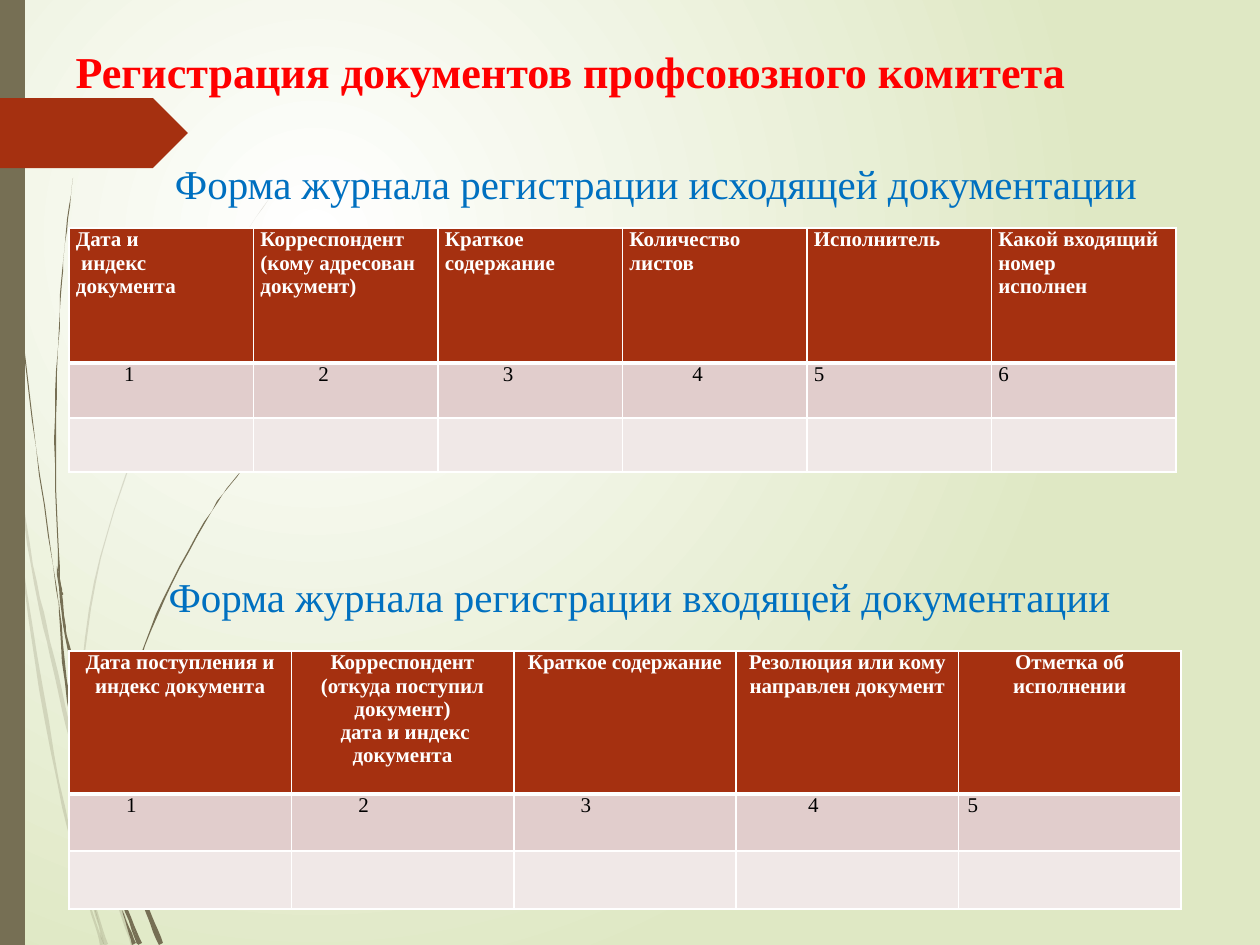
from math import hypot
from pptx import Presentation
from pptx.dml.color import RGBColor
from pptx.enum.shapes import MSO_SHAPE
from pptx.enum.text import MSO_ANCHOR, MSO_AUTO_SIZE, PP_ALIGN
from pptx.oxml import parse_xml
from pptx.oxml.ns import nsdecls
from pptx.util import Pt

# Content
TITLE = "Регистрация документов профсоюзного комитета"
# text, (left, top, width, height)
SUBTITLES = [
    ("Форма журнала регистрации исходящей документации", (89, 138, 1134, 91)),
    ("Форма журнала регистрации входящей документации", (88, 552, 1103, 89)),
]
TABLES = [
    {"box": (69, 228, 1107), "rows": (135, 55, 54), "inset": 7, "align": PP_ALIGN.LEFT,
     "head": ["Дата и\n индекс документа", "Корреспондент\n(кому адресован документ)",
              "Краткое содержание", "Количество листов", "Исполнитель",
              "Какой входящий номер\nисполнен"]},
    {"box": (69, 651, 1112), "rows": (143, 57, 58), "inset": 9, "align": PP_ALIGN.CENTER,
     "head": ["Дата поступления и индекс документа",
              "Корреспондент\n(откуда поступил документ)\n дата и индекс документа",
              "Краткое содержание", "Резолюция или кому направлен документ",
              "Отметка об исполнении"]},
]
NUMBER_INDENTS = [48, 58, 58, 63, 0, 0]

# Grass blades: centre line, (thickness at start, middle, end)
PALE_BLADES = [
    ([(0, 365), (5, 400), (9, 441)], (3, 3, 0.5)),
    ([(13, 435), (32, 565), (52, 656), (74, 751)], (0.5, 4, 4)),
    ([(77, 751), (79, 766), (109, 873), (133, 945)], (0.5, 3, 4)),
    ([(92, 896), (106, 945)], (0.5, 2, 4)),
    ([(10, 441), (26, 592), (58, 781), (88, 900)], (0.5, 4, 0.5)),
    ([(73, 755), (78, 814), (91, 896)], (0.5, 3, 0.5)),
    ([(273, 193), (235, 249), (200, 308), (139, 439), (95, 582), (76, 736),
      (76, 751)], (0.5, 1, 2)),
    ([(88, 900), (102, 945)], (0.5, 2, 4)),
    ([(75, 738), (75, 769)], (0.5, 4, 0.5)),
    ([(82, 861), (87, 882), (104, 945)], (0.5, 2, 1)),
]
DARK_BLADES = [
    ([(3, 0), (6, 60), (7, 139), (18, 294), (36, 447), (59, 606)], (1, 1.5, 0.5)),
    ([(63, 595), (66, 636), (94, 745), (111, 813)], (0.5, 3, 2)),
    ([(115, 808), (117, 822), (140, 891), (161, 944)], (0.5, 4, 5)),
    ([(59, 601), (69, 701), (100, 829), (122, 910)], (0.5, 5, 0.5)),
    ([(73, 178), (65, 243), (60, 309), (55, 440), (59, 568), (62, 595)], (0.5, 1, 2)),
    ([(126, 906), (140, 944)], (0.5, 2, 4)),
    ([(57, 566), (66, 636)], (0.5, 3, 0.5)),
    ([(272, 433), (241, 471), (212, 511), (164, 599), (129, 695), (113, 796),
      (114, 807)], (0.5, 1.5, 3)),
    ([(122, 910), (134, 944)], (0.5, 2, 4)),
    ([(111, 813), (116, 860), (126, 906)], (0.5, 3, 0.5)),
    ([(112, 795), (115, 827)], (0.5, 4, 0.5)),
    ([(115, 871), (121, 895), (138, 944)], (0.5, 3, 2)),
]

FONT = "Times New Roman"
OLIVE, RUST, WHITE, RED, BLUE = "766F54", "A53010", "FFFFFF", "FF0000", "0070C0"
ROW_FILLS = [RUST, "E1CDCC", "F0E8E7"]
SCALE = 914400 / 126


def px(n):
    return round(n * SCALE)


def rgb(color):
    return RGBColor.from_string(color)


def style(p, size, color, bold=False, align=PP_ALIGN.LEFT):
    p.alignment = align
    for r in p.runs:
        r.font.name, r.font.size, r.font.bold = FONT, Pt(size), bold
        r.font.color.rgb = rgb(color)


def paint(sp, color, alpha=None):
    sp.shadow.inherit = False
    sp.fill.solid()
    sp.fill.fore_color.rgb = rgb(color)
    sp.line.fill.background()
    if alpha:
        clr = sp._element.spPr.find(".//{*}srgbClr")
        clr.append(parse_xml(f'<a:alpha {nsdecls("a")} val="{alpha * 1000}"/>'))


def smooth(points, steps=6):
    """Catmull-Rom curve through the points."""
    ext = [points[0], *points, points[-1]]
    curve = []
    for a, b, c, d in zip(ext, ext[1:], ext[2:], ext[3:]):
        for t in (i / steps for i in range(steps)):
            curve.append(tuple(
                (2 * q + (r - p) * t + (2 * p - 5 * q + 4 * r - u) * t ** 2
                 + (3 * q - p - 3 * r + u) * t ** 3) / 2
                for p, q, r, u in zip(a, b, c, d)))
    return curve + [points[-1]]


def add_blade(s, points, widths, alpha=None):
    start, middle, end = widths
    line = smooth(points)
    last = len(line) - 1
    left, right = [], []
    for i, (x, y) in enumerate(line):
        (x0, y0), (x1, y1) = line[max(i - 1, 0)], line[min(i + 1, last)]
        t = 2 * i / last
        width = start + (middle - start) * t if t < 1 else middle + (end - middle) * (t - 1)
        k = width / 2 / hypot(x1 - x0, y1 - y0)
        dx, dy = (y1 - y0) * k, (x0 - x1) * k
        left.append((x - dx, y - dy))
        right.append((x + dx, y + dy))
    fb = s.shapes.build_freeform(*left[0], scale=SCALE)
    fb.add_line_segments(left[1:] + right[::-1], close=True)
    paint(fb.convert_to_shape(), OLIVE, alpha)


def set_borders(cell, header):
    tcPr = cell._tc.get_or_add_tcPr()
    for i, side in enumerate("LRTB"):
        width = Pt(3 if header and side == "B" else 1)
        tcPr.insert(i, parse_xml(
            f'<a:ln{side} {nsdecls("a")} w="{width}"><a:solidFill>'
            f'<a:srgbClr val="{WHITE}"/></a:solidFill></a:ln{side}>'))


def add_journal(s, spec):
    x, y, w = spec["box"]
    head, rows = spec["head"], spec["rows"]
    n = len(head)
    table = s.shapes.add_table(len(rows), n, px(x), px(y), px(w), px(sum(rows))).table
    for col in table.columns:
        col.width = px(w / n)
    numbers = [str(i + 1) for i in range(n)]
    for i, (height, texts) in enumerate(zip(rows, (head, numbers, [""] * n))):
        table.rows[i].height = px(height)
        for j, text in enumerate(texts):
            cell = table.cell(i, j)
            cell.margin_left = cell.margin_right = px(spec["inset"])
            cell.margin_top = cell.margin_bottom = 0
            cell.fill.solid()
            cell.fill.fore_color.rgb = rgb(ROW_FILLS[i])
            set_borders(cell, i == 0)
            cell.text_frame.text = text
            for p in cell.text_frame.paragraphs:
                if i == 0:
                    style(p, 12, WHITE, True, spec["align"])
                else:
                    style(p, 12, "000000")
                    p._p.get_or_add_pPr().set("marL", str(px(NUMBER_INDENTS[j])))


def add_subtitle(s, text, box):
    tf = s.shapes.add_textbox(*map(px, box)).text_frame
    tf.word_wrap = True
    tf.vertical_anchor = MSO_ANCHOR.MIDDLE
    tf.text = text
    style(tf.paragraphs[0], 23.4, BLUE, align=PP_ALIGN.CENTER)


def main():
    prs = Presentation()
    prs.slide_width, prs.slide_height = px(1260), px(945)
    s = prs.slides.add_slide(prs.slide_layouts[5])

    # Background: radial gradient
    s._element.cSld.insert(0, parse_xml(
        f'<p:bg {nsdecls("p", "a")}><p:bgPr><a:gradFill rotWithShape="1"><a:gsLst>'
        '<a:gs pos="0"><a:srgbClr val="FFFFFF"/></a:gs>'
        '<a:gs pos="100000"><a:srgbClr val="DFE8C4"/></a:gs></a:gsLst>'
        '<a:path path="circle"><a:fillToRect l="50000" t="50000" r="100000" b="100000"/>'
        '</a:path></a:gradFill><a:effectLst/></p:bgPr></p:bg>'))

    # Decoration: blades, side bar, pointer
    for blades, alpha in ((PALE_BLADES, 20), (DARK_BLADES, None)):
        for points, widths in blades:
            add_blade(s, points, widths, alpha)
    for kind, box, color in ((MSO_SHAPE.RECTANGLE, (0, 0, 25, 945), OLIVE),
                             (MSO_SHAPE.PENTAGON, (0, 98, 188, 70), RUST)):
        paint(s.shapes.add_shape(kind, *map(px, box)), color)

    # Title, in front of the decoration
    title = s.shapes.title
    title.left, title.top, title.width, title.height = map(px, (63, 38, 1134, 91))
    tf = title.text_frame
    tf.text = TITLE
    tf.auto_size = MSO_AUTO_SIZE.NONE
    tf.vertical_anchor = MSO_ANCHOR.TOP
    style(tf.paragraphs[0], 25.2, RED, True)
    s.shapes._spTree.append(title._element)

    # Journals with their headings
    for (text, box), spec in zip(SUBTITLES, TABLES):
        add_subtitle(s, text, box)
        add_journal(s, spec)

    prs.save("out.pptx")


if __name__ == "__main__":
    main()
